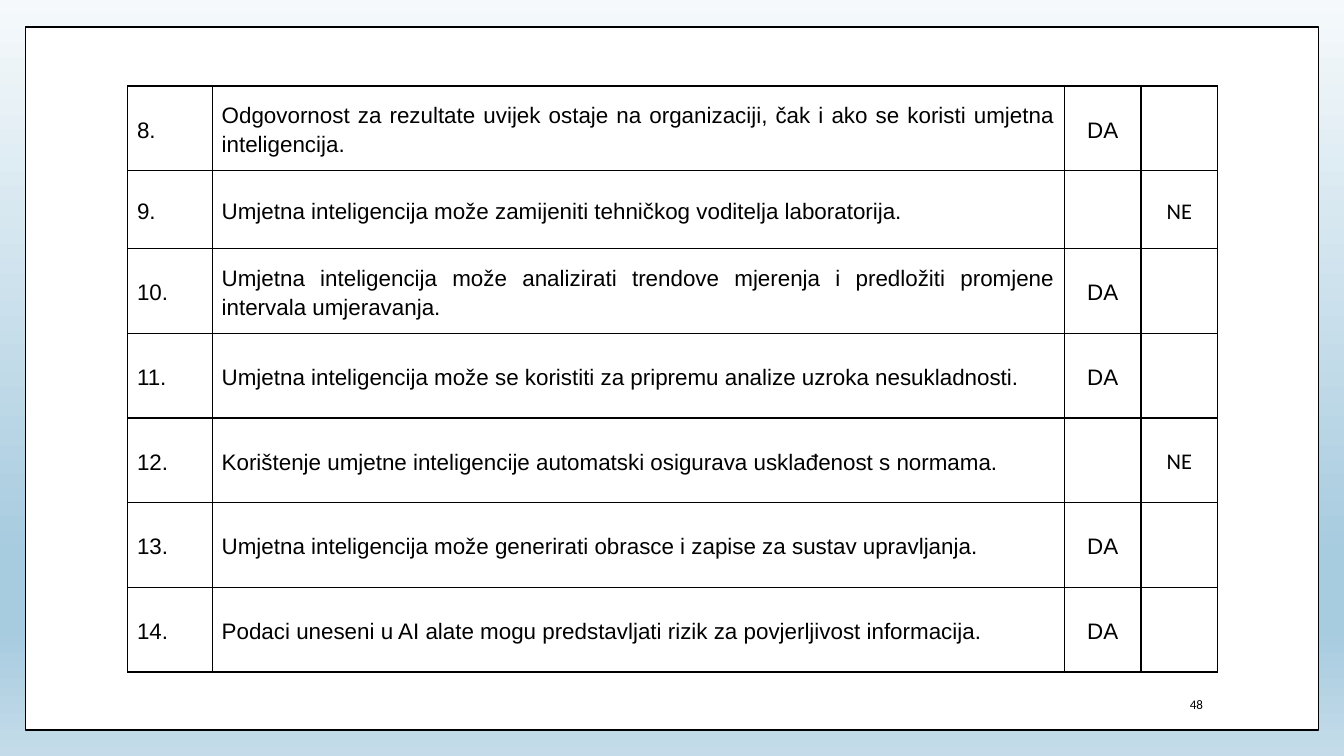
from lxml import etree
from pptx import Presentation
from pptx import util as u
from pptx.dml.color import RGBColor
from pptx.enum import shapes, text
from pptx.oxml.ns import qn

HUES = {"ink": "000000", "paper": "FFFFFF",
        "pale": "F5F9FB", "blue": "A7CBDF", "mist": "C4DCEA"}
STOPS = [(0, "pale"), (74, "blue"), (83, "blue"), (100, "mist")]
COLS = [0.63, 6.34, 0.57, 0.57]
ROWS = [0.63, 0.58, 0.63, 0.63, 0.63, 0.63, 0.63]
FIRST = 8
CLAIMS = [
    ("Odgovornost za rezultate uvijek ostaje na organizaciji, čak i ako se "
     "koristi umjetna inteligencija.", True),
    ("Umjetna inteligencija može zamijeniti tehničkog voditelja laboratorija.", False),
    ("Umjetna inteligencija može analizirati trendove mjerenja i predložiti "
     "promjene intervala umjeravanja.", True),
    ("Umjetna inteligencija može se koristiti za pripremu analize uzroka "
     "nesukladnosti.", True),
    ("Korištenje umjetne inteligencije automatski osigurava usklađenost s "
     "normama.", False),
    ("Umjetna inteligencija može generirati obrasce i zapise za sustav "
     "upravljanja.", True),
    ("Podaci uneseni u AI alate mogu predstavljati rizik za povjerljivost "
     "informacija.", True),
]
ALIGN = text.PP_ALIGN


def tint(name):
    return RGBColor.from_string(HUES[name])


def write(frame, words, size, face, align, lead, after):
    frame.text = words
    para = frame.paragraphs[0]
    para.alignment = align
    para.line_spacing = lead
    para.space_after = u.Pt(after)
    for run in para.runs:
        run.font.size = u.Pt(size)
        run.font.name = face
        run.font.color.rgb = tint("ink")


def add_sky(slide):
    """Fill the background with the vertical gradient."""
    fill = slide.background.fill
    fill.gradient()
    fill.gradient_angle = 270
    stops = slide.element.find(".//" + qn("a:gsLst"))
    for old in list(stops):
        stops.remove(old)
    for place, name in STOPS:
        stop = etree.SubElement(stops, qn("a:gs"), pos=str(place * 1000))
        etree.SubElement(stop, qn("a:srgbClr"), val=HUES[name])


def add_panel(slide, box):
    panel = slide.shapes.add_shape(shapes.MSO_SHAPE.RECTANGLE, *map(u.Inches, box))
    panel.shadow.inherit = False
    panel.fill.solid()
    panel.fill.fore_color.rgb = tint("paper")
    panel.line.color.rgb = tint("ink")
    panel.line.width = u.Pt(1)


def add_page(slide, box, number):
    frame = slide.shapes.add_textbox(*map(u.Inches, box)).text_frame
    frame.word_wrap = True
    frame.vertical_anchor = text.MSO_ANCHOR.MIDDLE
    write(frame, str(number), 7, "Calibri", ALIGN.RIGHT, 0.9, 6)


def edge(cell):
    """Draw a thin line on all four sides of a cell."""
    props = cell._tc.get_or_add_tcPr()
    for spot, side in enumerate("LRTB"):
        line = etree.Element(qn("a:ln" + side), w=str(u.Pt(0.75)))
        fill = etree.SubElement(line, qn("a:solidFill"))
        etree.SubElement(fill, qn("a:srgbClr"), val=HUES["ink"])
        props.insert(spot, line)


def add_quiz(slide, box):
    grid = slide.shapes.add_table(len(ROWS), len(COLS), *map(u.Inches, box)).table
    grid.first_row = grid.horz_banding = False
    for col, width in zip(grid.columns, COLS):
        col.width = u.Inches(width)
    for row, height in zip(grid.rows, ROWS):
        row.height = u.Inches(height)
    aligns = [ALIGN.LEFT, ALIGN.JUSTIFY, ALIGN.CENTER, ALIGN.CENTER]
    faces = ["Arial", "Arial", "Arial", "Calibri"]
    for i, (claim, true) in enumerate(CLAIMS):
        words = [f"{FIRST + i}.", claim, "DA" if true else "", "" if true else "NE"]
        for j, word in enumerate(words):
            cell = grid.cell(i, j)
            cell.fill.background()
            edge(cell)
            cell.vertical_anchor = text.MSO_ANCHOR.MIDDLE
            cell.margin_left = cell.margin_right = u.Inches(0.07)
            cell.margin_top = cell.margin_bottom = 0
            if word:
                write(cell.text_frame, word, 12, faces[j], aligns[j], 1.15, 3)


def main():
    deck = Presentation()
    deck.slide_width = u.Inches(10)
    deck.slide_height = deck.slide_width * 9 // 16
    slide = deck.slides.add_slide(deck.slide_layouts[6])
    add_sky(slide)
    add_panel(slide, (0.19, 0.2, 9.62, 5.23))
    add_page(slide, (7.65, 5.1, 1.4, 0.3), 48)
    add_quiz(slide, (0.95, 0.64, sum(COLS), sum(ROWS)))
    deck.save("out.pptx")


if __name__ == "__main__":
    main()
